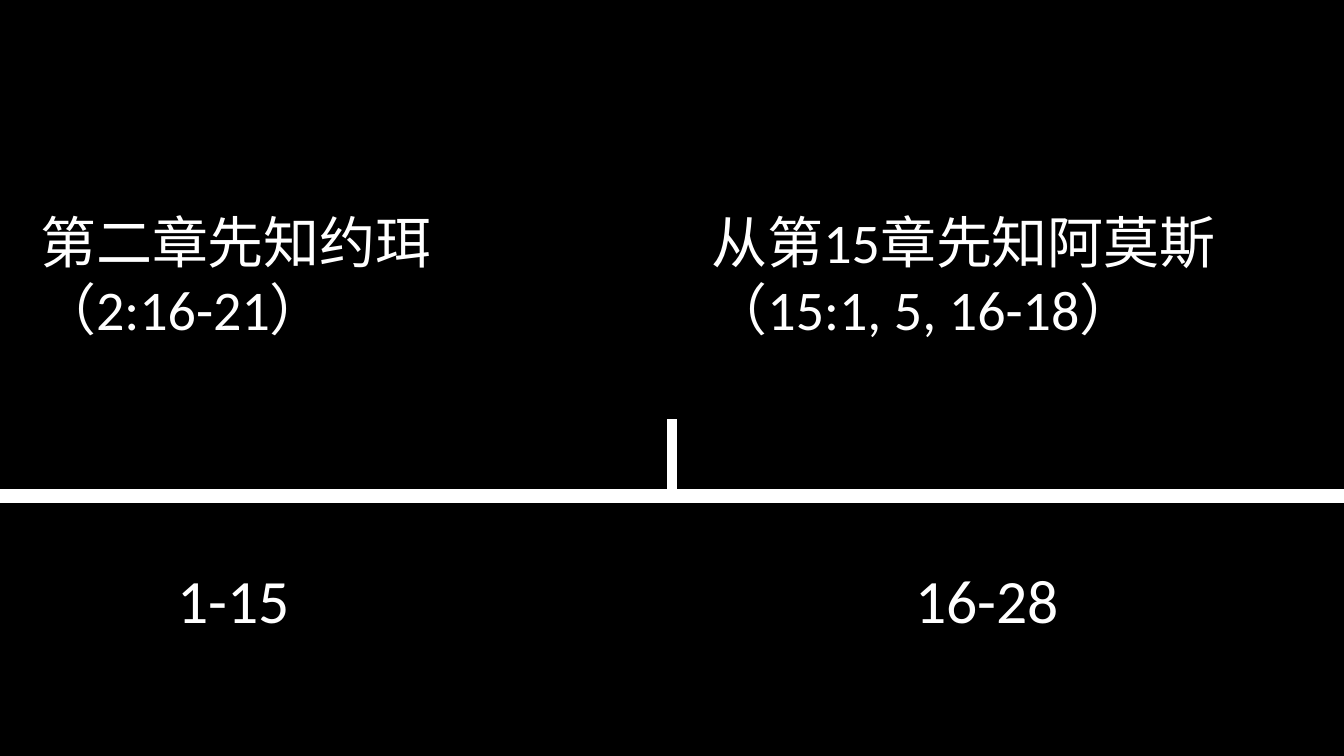
from pptx import Presentation
from pptx.dml.color import RGBColor
from pptx.enum.shapes import MSO_CONNECTOR
from pptx.enum.text import MSO_AUTO_SIZE
from pptx.oxml.ns import qn
from pptx.util import Inches, Pt
from lxml import etree

STRAIGHT = MSO_CONNECTOR.STRAIGHT
GROW = MSO_AUTO_SIZE.SHAPE_TO_FIT_TEXT
WIDE, HIGH = Inches(13.333), Inches(7.5)
BLANK = 6


def tint(code):
    return RGBColor.from_string(code)


class Board:
    """Style and current slide; lengths are percent of the slide's size."""

    font = "Calibri"
    ink = "FFFFFF"
    ground = "000000"

    def __init__(self, deck):
        self.slide = deck.slides.add_slide(deck.slide_layouts[BLANK])
        fill = self.slide.background.fill
        fill.solid()
        fill.fore_color.rgb = tint(self.ground)

    def spot(self, x, y):
        return round(WIDE * x / 100), round(HIGH * y / 100)

    def line(self, start, end, width):
        link = self.slide.shapes.add_connector(
            STRAIGHT, *self.spot(*start), *self.spot(*end))
        link.line.color.rgb = tint(self.ink)
        link.line.width = Pt(width)
        etree.SubElement(link._element.spPr, qn("a:effectLst"))

    def text(self, words, x, y, w, h, size):
        box = self.slide.shapes.add_textbox(*self.spot(x, y), *self.spot(w, h))
        frame = box.text_frame
        frame.word_wrap = True
        frame.auto_size = GROW
        para = frame.paragraphs[0]
        para.text = words
        para.font.name = self.font
        para.font.size = Pt(size)
        para.font.color.rgb = tint(self.ink)


def main():
    deck = Presentation()
    deck.slide_width, deck.slide_height = WIDE, HIGH
    board = Board(deck)

    # Timeline with its middle mark
    axis = 65.6
    board.line((0, axis), (100, axis), 10.25)
    board.line((50, 55.47), (50, axis), 7)

    # Each half: prophet above the line, chapters below it
    halves = [
        ("第二章先知约珥（2:16-21）", 2.25, 39.23, "1-15", 12.45),
        ("从第15章先知阿莫斯（15:1, 5, 16-18）", 52.2, 47.78, "16-28", 67.35),
    ]
    for seer, left, width, span, mark in halves:
        board.text(seer, left, 26.8, width, 19.33, 40)
        board.text(span, mark, 73.73, 25.88, 11.2, 44)

    deck.save("out.pptx")


if __name__ == "__main__":
    main()
